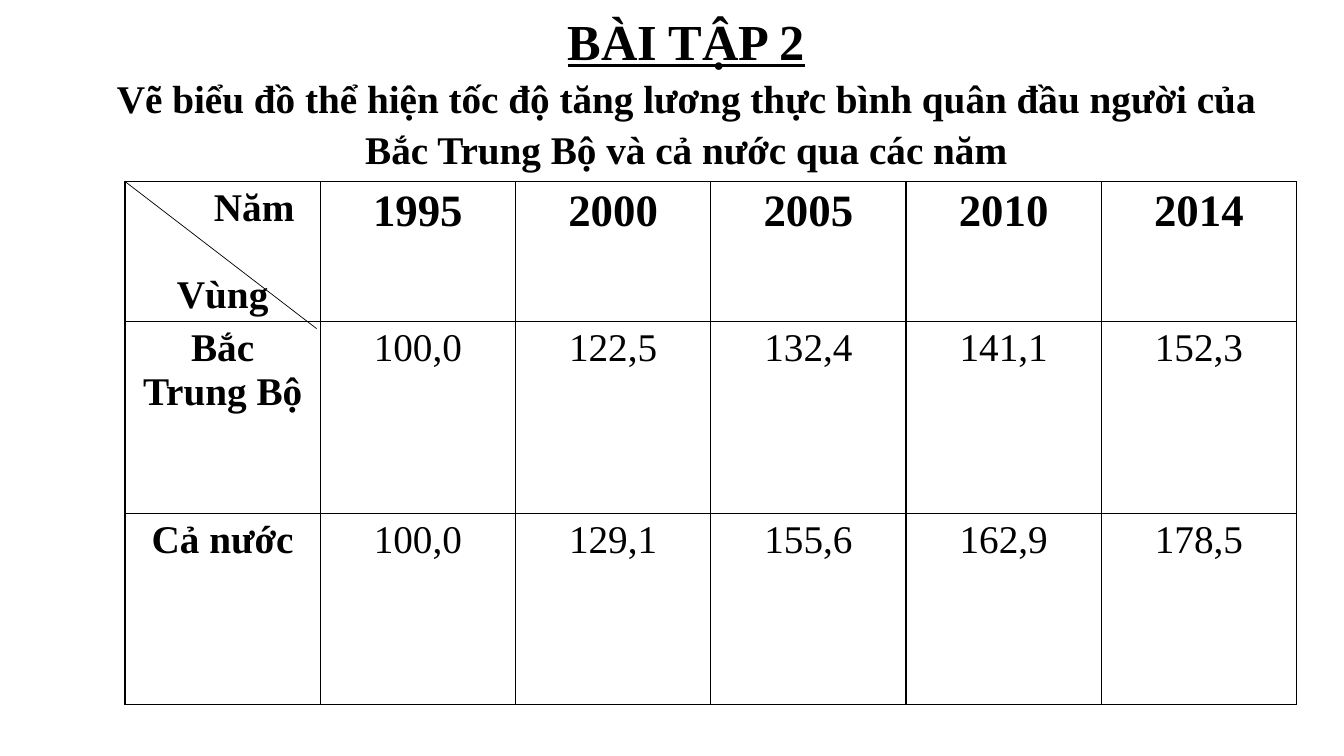
import dataclasses

import lxml.etree
import pptx
import pptx.dml.color
import pptx.enum.shapes
import pptx.enum.text
import pptx.oxml.ns
import pptx.util

FONT = "Times New Roman"
BLACK = "000000"
SLIDE_WIDTH = pptx.util.Inches(13.33)
SLIDE_HEIGHT = pptx.util.Inches(7.5)
TABLE_LEFT, TABLE_TOP = 9.3, 24
COLUMN_WIDTH = 14.53
ROW_HEIGHTS = (18.53, 25.33, 25.33)
YEARS = ("1995", "2000", "2005", "2010", "2014")


@dataclasses.dataclass(frozen=True)
class Region:
    """A region and its real wage index for each year."""

    name: str
    values: tuple[str, ...]


REGIONS = (
    Region("Bắc Trung Bộ", ("100,0", "122,5", "132,4", "141,1", "152,3")),
    Region("Cả nước", ("100,0", "129,1", "155,6", "162,9", "178,5")),
)


def across(percent: float) -> int:
    """Turn a percentage of the slide width into a length."""
    return round(SLIDE_WIDTH * percent / 100)


def down(percent: float) -> int:
    """Turn a percentage of the slide height into a length."""
    return round(SLIDE_HEIGHT * percent / 100)


def color(value: str) -> pptx.dml.color.RGBColor:
    """Turn a hex string into a colour."""
    return pptx.dml.color.RGBColor.from_string(value)


def write(text_frame, text: str, *, size: float = 28, bold: bool = False,
          underline: bool = False, indent: float = 0, before: float = 0,
          spacing: float = 1.0) -> None:
    """Write a centred paragraph, using the first one while it is empty."""
    paragraph = text_frame.paragraphs[0]
    if paragraph.text:
        paragraph = text_frame.add_paragraph()
    paragraph.alignment = pptx.enum.text.PP_ALIGN.CENTER
    paragraph.line_spacing = spacing
    paragraph.space_before = pptx.util.Pt(before)
    if indent:
        paragraph._p.get_or_add_pPr().set("marL", str(pptx.util.Pt(indent)))
    run = paragraph.add_run()
    run.text = text
    run.font.name = FONT
    run.font.size = pptx.util.Pt(size)
    run.font.bold = bold
    run.font.underline = underline
    run.font.color.rgb = color(BLACK)


def outline_cell(cell) -> None:
    """Give a cell thin borders on all sides and no fill."""
    properties = cell._tc.get_or_add_tcPr()
    qualify = pptx.oxml.ns.qn
    for side in ("a:lnL", "a:lnR", "a:lnT", "a:lnB"):
        border = lxml.etree.SubElement(properties, qualify(side), w=str(pptx.util.Pt(1)))
        fill = lxml.etree.SubElement(border, qualify("a:solidFill"))
        lxml.etree.SubElement(fill, qualify("a:srgbClr"), val=BLACK)
    cell.fill.background()


def add_heading(slide) -> None:
    """Fill the title with the exercise number and its task."""
    title = slide.shapes.title
    title.left, title.top = across(5.63), down(0)
    title.width, title.height = across(90.85), down(22)
    frame = title.text_frame
    frame.word_wrap = True
    frame.auto_size = pptx.enum.text.MSO_AUTO_SIZE.NONE
    frame.vertical_anchor = pptx.enum.text.MSO_ANCHOR.TOP
    write(frame, "BÀI TẬP 2", size=36, bold=True, underline=True, spacing=1.08)
    write(frame, "Vẽ biểu đồ thể hiện tốc độ tăng lương thực bình quân đầu người "
          "của Bắc Trung Bộ và cả nước qua các năm", bold=True, spacing=1.08)


def add_wage_table(slide) -> None:
    """Add the table of regions by years."""
    column_count = len(YEARS) + 1
    table = slide.shapes.add_table(
        len(ROW_HEIGHTS), column_count, across(TABLE_LEFT), down(TABLE_TOP),
        across(COLUMN_WIDTH * column_count), down(sum(ROW_HEIGHTS))).table
    table.first_row = table.horz_banding = False
    for column in table.columns:
        column.width = across(COLUMN_WIDTH)
    for row, height in zip(table.rows, ROW_HEIGHTS):
        row.height = down(height)
    for cell in table.iter_cells():
        outline_cell(cell)

    corner = table.cell(0, 0).text_frame
    write(corner, "Năm", bold=True, indent=45)
    write(corner, "Vùng", bold=True, before=31)
    for column, year in enumerate(YEARS, start=1):
        write(table.cell(0, column).text_frame, year, size=32, bold=True)
    for row, region in enumerate(REGIONS, start=1):
        write(table.cell(row, 0).text_frame, region.name, bold=True)
        for column, value in enumerate(region.values, start=1):
            write(table.cell(row, column).text_frame, value)


def add_corner_diagonal(slide) -> None:
    """Split the corner cell between years and regions."""
    diagonal = slide.shapes.add_connector(
        pptx.enum.shapes.MSO_CONNECTOR.STRAIGHT,
        across(TABLE_LEFT), down(TABLE_TOP), across(23.56), down(43.47))
    diagonal.line.color.rgb = color(BLACK)
    diagonal.line.width = pptx.util.Pt(0.5)
    lxml.etree.SubElement(diagonal._element.spPr, pptx.oxml.ns.qn("a:effectLst"))


def main() -> None:
    """Build and save the slide."""
    presentation = pptx.Presentation()
    presentation.slide_width = SLIDE_WIDTH
    presentation.slide_height = SLIDE_HEIGHT
    slide = presentation.slides.add_slide(
        presentation.slide_layouts.get_by_name("Title Only"))
    add_heading(slide)
    add_wage_table(slide)
    add_corner_diagonal(slide)
    presentation.save("out.pptx")


if __name__ == "__main__":
    main()
